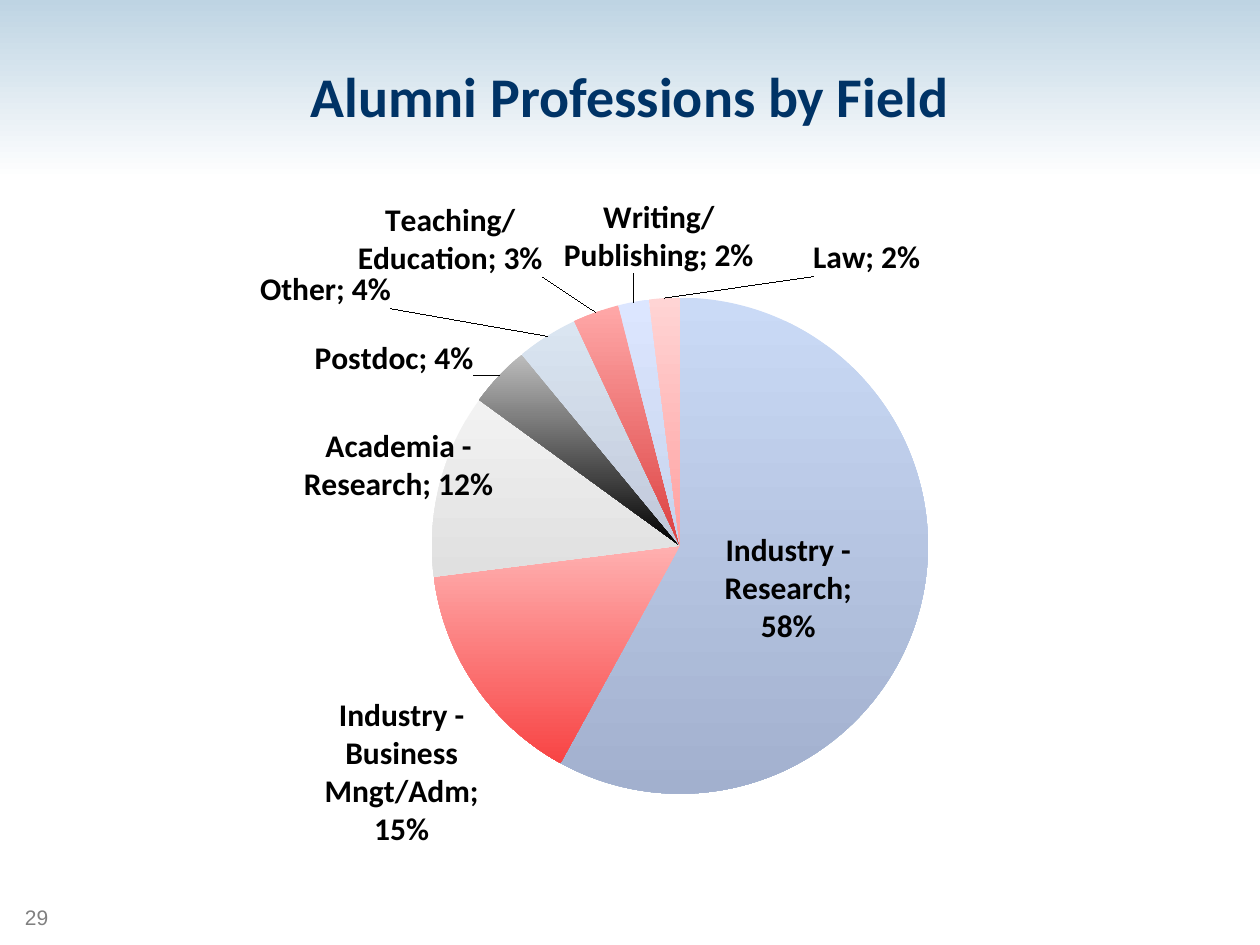
from dataclasses import dataclass

from lxml import etree
from pptx import Presentation
from pptx import util as u
from pptx.chart.data import CategoryChartData
from pptx.dml.color import RGBColor
from pptx.enum import chart as ch, shapes, text
from pptx.oxml.ns import qn

WIDTH, HEIGHT = 10, 7.5


@dataclass
class Field:
    name: str
    share: float
    top: str
    bottom: str
    dx: float
    dy: float


FIELDS = [
    Field("Industry - Research", 0.58, "CADAF6", "A2B0CE", -0.2, -0.11),
    Field("Industry - Business Mngt/Adm", 0.15, "FFB0B0", "F84444", 0.01, 0.01),
    Field("Academia - Research", 0.12, "F2F2F2", "E0E0E0", 0.06, 0.03),
    Field("Postdoc", 0.04, "BCBCBC", "000000", -0.02, 0.01),
    Field("Other", 0.04, "DAE5F1", "C0C8DA", -0.15, -0.03),
    Field("Teaching/Education", 0.03, "FFA8A8", "DC4040", -0.05, -0.04),
    Field("Writing/Publishing", 0.02, "DCE6FF", "C6D3EC", 0.12, -0.03),
    Field("Law", 0.02, "FFD4D4", "FFA0A0", 0.2, -0.02),
]


def color(value: str) -> RGBColor:
    return RGBColor.from_string(value)


def box(x: float, y: float, w: float, h: float) -> list[int]:
    return [u.Inches(v) for v in (x * WIDTH, y * HEIGHT, w * WIDTH, h * HEIGHT)]


def style(font, name: str, size: float, value: str, bold: bool = False) -> None:
    font.name, font.size, font.bold = name, u.Pt(size), bold
    font.color.rgb = color(value)


def gradient(fill, top: str, bottom: str) -> None:
    fill.gradient()
    fill.gradient_angle = 270
    for stop, value, position in zip(fill.gradient_stops, (top, bottom), (0, 1)):
        stop.color.rgb = color(value)
        stop.position = position


def add_text(s, area: list[int], words: str, name: str, size: float, value: str,
             bold: bool = False, align=text.PP_ALIGN.LEFT, spacing: float = 1.0) -> None:
    tf = s.shapes.add_textbox(*area).text_frame
    tf.word_wrap = True
    tf.vertical_anchor = text.MSO_ANCHOR.MIDDLE
    p = tf.paragraphs[0]
    p.alignment, p.line_spacing = align, spacing
    r = p.add_run()
    r.text = words
    style(r.font, name, size, value, bold)


def layout(**parts: object):
    root = etree.Element(qn("c:layout"))
    manual = etree.SubElement(root, qn("c:manualLayout"))
    for tag, value in parts.items():
        etree.SubElement(manual, qn(f"c:{tag}")).set("val", str(value))
    return root


def label_slice(point, series, index: int, field: Field) -> None:
    label = point.data_label
    style(label.font, "Calibri", 18, "000000", True)
    label.position = ch.XL_LABEL_POSITION.OUTSIDE_END
    node = series._element.xpath(f"c:dLbls/c:dLbl[c:idx/@val='{index}']")[0]
    node.find(qn("c:showCatName")).set("val", "1")
    number = etree.Element(qn("c:numFmt"), formatCode="0%", sourceLinked="0")
    node.insert(1, layout(x=field.dx, y=field.dy))
    node.insert(2, number)
    etree.SubElement(node, qn("c:separator")).text = "; "


def add_pie(s, area: list[int]) -> None:
    data = CategoryChartData(number_format="0%")
    data.categories = [f.name for f in FIELDS]
    data.add_series("Series 1", [f.share for f in FIELDS])
    chart = s.shapes.add_chart(ch.XL_CHART_TYPE.PIE, *area, data).chart
    chart.has_legend = chart.has_title = False
    style(chart.font, "Arial", 10, "000000")
    plot = chart.plots[0]
    plot.vary_by_categories = True
    series = plot.series[0]
    for index, field in enumerate(FIELDS):
        point = series.points[index]
        gradient(point.format.fill, field.top, field.bottom)
        point.format.line.fill.background()
        label_slice(point, series, index, field)
    plot_area = chart._chartSpace.chart.plotArea
    for old in plot_area.findall(qn("c:layout")):
        plot_area.remove(old)
    plot_area.insert(0, layout(layoutTarget="inner", xMode="edge", yMode="edge",
                               x=0.29, y=0.14, w=0.5, h=0.7))


def main() -> None:
    prs = Presentation()
    prs.slide_width, prs.slide_height = u.Inches(WIDTH), u.Inches(HEIGHT)
    s = prs.slides.add_slide(prs.slide_layouts[6])
    band = s.shapes.add_shape(shapes.MSO_SHAPE.RECTANGLE, *box(0, 0, 1, 0.19))
    band.shadow.inherit = False
    band.line.fill.background()
    gradient(band.fill, "BED4E3", "FFFFFF")
    add_text(s, box(0.01, 0.95, 0.07, 0.04), "29", "Arial", 12, "808080")
    add_text(s, box(0.03, 0.02, 0.94, 0.17), "Alumni Professions by Field", "Calibri", 32,
             "003366", True, text.PP_ALIGN.CENTER, 0.9)
    add_pie(s, box(0.105, 0.21, 0.805, 0.75))
    prs.save("out.pptx")


if __name__ == "__main__":
    main()
